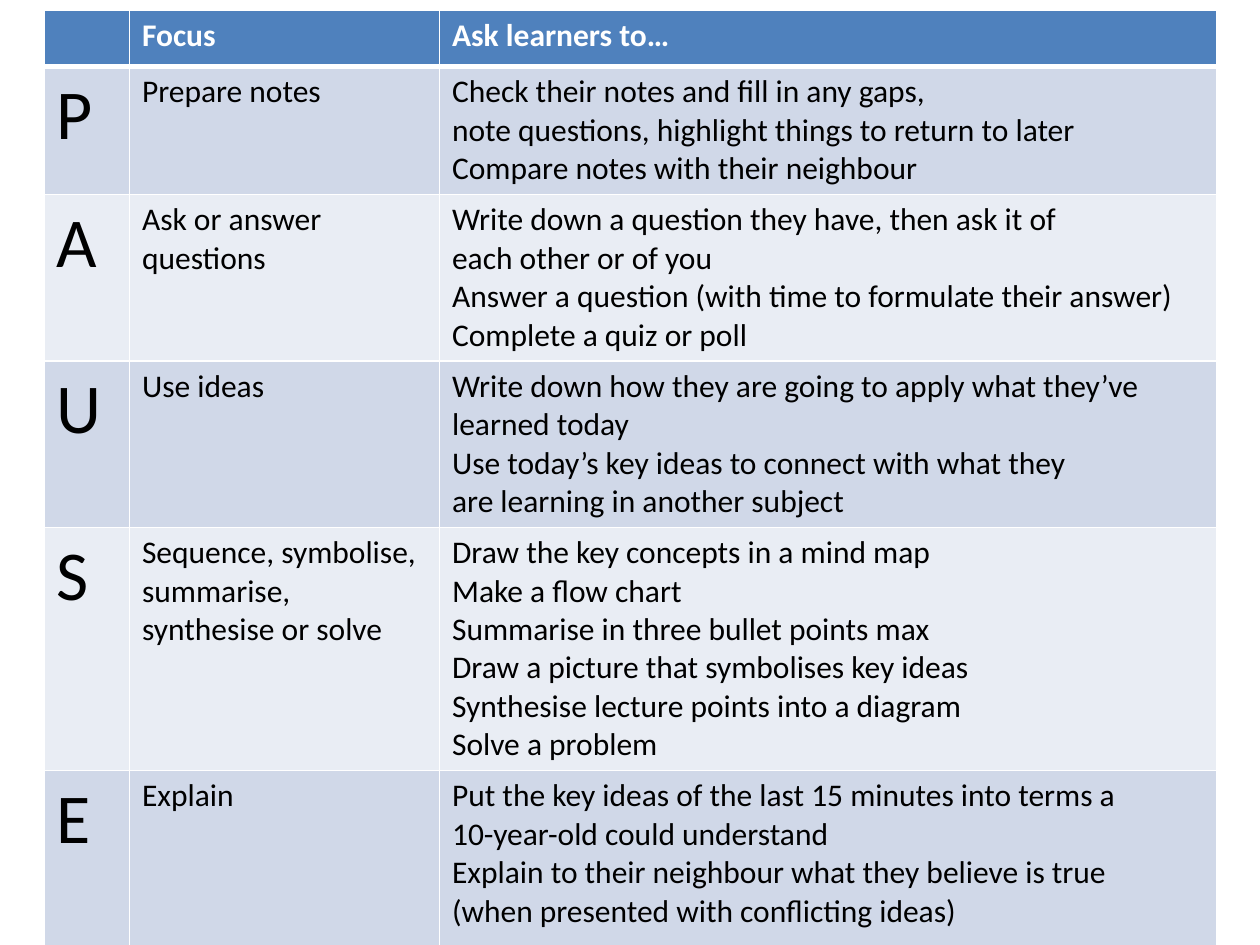
from lxml.etree import SubElement
from pptx import Presentation
from pptx.dml.color import RGBColor
from pptx.oxml.ns import qn
from pptx.util import Cm, Pt

HEADER_FILL = "4F81BD"
BAND_FILLS = ("D0D8E8", "E9EDF4")
BORDER_COLOR = "FFFFFF"
COLUMN_WIDTHS = (1.72, 6.25, 15.67)
ROW_HEIGHTS = (1.14, 2.57, 3.15, 3.15, 4.62, 3.53)

HEADER_FORMAT = {"name": "Calibri", "size": Pt(18), "bold": True}
BODY_FORMAT = {"name": "Calibri", "size": Pt(18), "bold": False}
LETTER_FORMAT = {"name": "Calibri", "size": Pt(40), "bold": False}

ROWS = [
    ("", "Focus", "Ask learners to…"),
    ("P", "Prepare notes",
     "Check their notes and fill in any gaps,\n"
     "note questions, highlight things to return to later\n"
     "Compare notes with their neighbour"),
    ("A", "Ask or answer questions",
     "Write down a question they have, then ask it of\n"
     "each other or of you\n"
     "Answer a question (with time to formulate their answer)\n"
     "Complete a quiz or poll"),
    ("U", "Use ideas",
     "Write down how they are going to apply what they’ve learned today\n"
     "Use today’s key ideas to connect with what they\n"
     "are learning in another subject"),
    ("S", "Sequence, symbolise, summarise, synthesise or solve",
     "Draw the key concepts in a mind map\n"
     "Make a flow chart\n"
     "Summarise in three bullet points max\n"
     "Draw a picture that symbolises key ideas\n"
     "Synthesise lecture points into a diagram\n"
     "Solve a problem"),
    ("E", "Explain",
     "Put the key ideas of the last 15 minutes into terms a\n"
     "10-year-old could understand\n"
     "Explain to their neighbour what they believe is true\n"
     "(when presented with conflicting ideas)"),
]


def color(value):
    return RGBColor.from_string(value)


def set_borders(cell, widths):
    properties = cell._tc.get_or_add_tcPr()
    for side, width in widths.items():
        line = SubElement(properties, qn(f"a:ln{side}"), w=str(Pt(width)))
        fill = SubElement(line, qn("a:solidFill"))
        SubElement(fill, qn("a:srgbClr"), val=BORDER_COLOR)


def format_cell(cell, text, font_format, text_color, fill_color):
    cell.text = text
    for paragraph in cell.text_frame.paragraphs:
        for attribute, value in font_format.items():
            setattr(paragraph.font, attribute, value)
        paragraph.font.color.rgb = color(text_color)
    cell.fill.solid()
    cell.fill.fore_color.rgb = color(fill_color)


def add_pause_table(slide, left, top):
    shape = slide.shapes.add_table(
        len(ROWS), len(COLUMN_WIDTHS), Cm(left), Cm(top),
        Cm(sum(COLUMN_WIDTHS)), Cm(sum(ROW_HEIGHTS)))
    table = shape.table
    for column, width in zip(table.columns, COLUMN_WIDTHS):
        column.width = Cm(width)
    for row_index, texts in enumerate(ROWS):
        row = table.rows[row_index]
        row.height = Cm(ROW_HEIGHTS[row_index])
        is_header = row_index == 0
        fill_color = HEADER_FILL if is_header else BAND_FILLS[(row_index - 1) % 2]
        text_color = "FFFFFF" if is_header else "000000"
        borders = {"L": 1, "R": 1, "T": 3 if row_index == 1 else 1,
                   "B": 3 if is_header else 1}
        for column_index, text in enumerate(texts):
            cell = row.cells[column_index]
            if is_header:
                font_format = HEADER_FORMAT
            else:
                font_format = BODY_FORMAT if column_index else LETTER_FORMAT
            set_borders(cell, borders)
            format_cell(cell, text, font_format, text_color, fill_color)


def main():
    presentation = Presentation()
    presentation.slide_width = Cm(25.4)
    presentation.slide_height = Cm(19.05)
    slide = presentation.slides.add_slide(presentation.slide_layouts[6])
    add_pause_table(slide, 0.89, 0.2)
    presentation.save("out.pptx")


if __name__ == "__main__":
    main()
